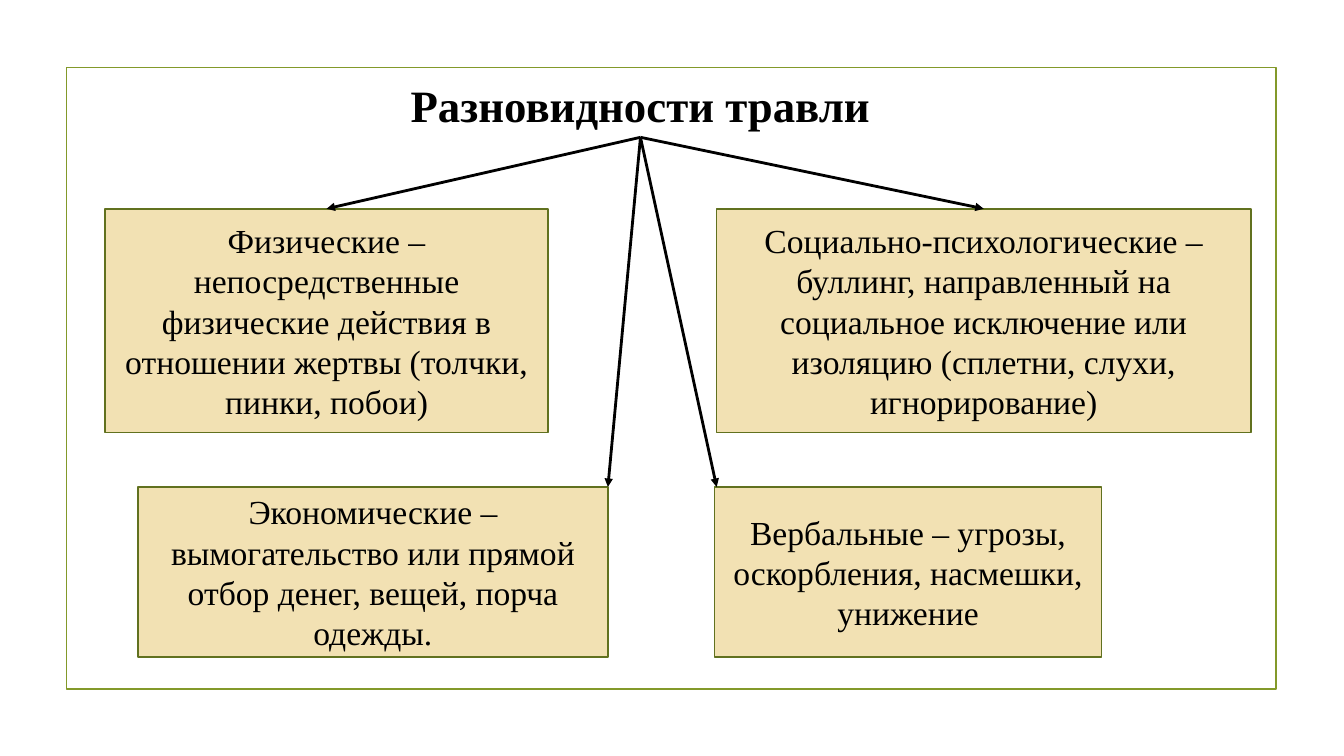
"""Build the slide that shows four kinds of bullying as a branching diagram."""
from dataclasses import dataclass
from typing import Optional

import pptx
import pptx.dml.color
import pptx.enum.shapes
import pptx.enum.text
import pptx.oxml
import pptx.oxml.ns
import pptx.util
from pptx.util import Cm

FONT = "Times New Roman"
BLACK = "000000"
UPPER_TOP, UPPER_HEIGHT = 5.26, 5.64
LOWER_TOP, LOWER_HEIGHT = 12.27, 4.29
TOP_SIDE, BOTTOM_SIDE = 0, 2


@dataclass(frozen=True)
class Kind:
    """A described kind of bullying; without arrow_x its arrow ends mid-top."""

    text: str
    left: float
    top: float
    width: float
    height: float
    arrow_x: Optional[float] = None


KINDS = [
    Kind("Физические – непосредственные физические действия в отношении жертвы "
         "(толчки, пинки, побои)", 2.64, UPPER_TOP, 11.18, UPPER_HEIGHT),
    Kind("Социально-психологические – буллинг, направленный на социальное исключение "
         "или изоляцию (сплетни, слухи, игнорирование)",
         18.06, UPPER_TOP, 13.46, UPPER_HEIGHT),
    Kind("Экономические – вымогательство или прямой отбор денег, вещей, порча одежды.",
         3.48, LOWER_TOP, 11.84, LOWER_HEIGHT, 15.32),
    Kind("Вербальные – угрозы, оскорбления, насмешки, унижение",
         18.01, LOWER_TOP, 9.75, LOWER_HEIGHT, 18.06),
]


def colour(value: str) -> pptx.dml.color.RGBColor:
    """Turn a hex string into a colour."""
    return pptx.dml.color.RGBColor.from_string(value)


def write(shape, text: str, size: float, bold: bool = False) -> None:
    """Put one centred paragraph into a shape."""
    shape.text_frame.text = text
    para = shape.text_frame.paragraphs[0]
    para.alignment = pptx.enum.text.PP_ALIGN.CENTER
    para.font.name = FONT
    para.font.size = pptx.util.Pt(size)
    para.font.bold = bold
    para.font.color.rgb = colour(BLACK)


def add_rectangle(page, left: float, top: float, width: float, height: float,
                  line: str, fill: Optional[str] = None):
    """Add an outlined rectangle, filled when a fill is given."""
    box = page.shapes.add_shape(pptx.enum.shapes.MSO_SHAPE.RECTANGLE,
                                Cm(left), Cm(top), Cm(width), Cm(height))
    box.shadow.inherit = False
    box.line.color.rgb = colour(line)
    box.line.width = pptx.util.Pt(1.25)
    if fill:
        box.fill.solid()
        box.fill.fore_color.rgb = colour(fill)
    else:
        box.fill.background()
    return box


def add_title(page):
    """Fill and place the title placeholder."""
    title = page.shapes.title
    title.left, title.top, title.width, title.height = (
        Cm(10.03), Cm(1.83), Cm(12.22), Cm(1.63))
    write(title, "Разновидности травли", 32, bold=True)
    frame = title.text_frame
    frame.word_wrap = False
    frame.vertical_anchor = pptx.enum.text.MSO_ANCHOR.TOP
    frame.auto_size = pptx.enum.text.MSO_AUTO_SIZE.SHAPE_TO_FIT_TEXT
    return title


def add_kind(page, kind: Kind):
    """Add the box of one kind."""
    box = add_rectangle(page, kind.left, kind.top, kind.width, kind.height,
                        "61711F", "F2E1B3")
    write(box, kind.text, 24)
    box.text_frame.word_wrap = True
    box.text_frame.vertical_anchor = pptx.enum.text.MSO_ANCHOR.MIDDLE
    return box


def add_arrow(page, title, box, kind: Kind) -> None:
    """Lead an arrow from the title to the box of a kind."""
    end_x = kind.left if kind.arrow_x is None else kind.arrow_x
    arrow = page.shapes.add_connector(
        pptx.enum.shapes.MSO_CONNECTOR.STRAIGHT,
        title.left, title.top, Cm(end_x), Cm(kind.top))
    arrow.begin_connect(title, BOTTOM_SIDE)
    if kind.arrow_x is None:
        arrow.end_connect(box, TOP_SIDE)
    arrow.line.color.rgb = colour(BLACK)
    arrow.line.width = pptx.util.Pt(2)
    namespace = pptx.oxml.ns.nsdecls("a")
    arrow.line._get_or_add_ln().append(
        pptx.oxml.parse_xml(f'<a:tailEnd {namespace} type="triangle"/>'))
    arrow._element.spPr.append(pptx.oxml.parse_xml(f"<a:effectLst {namespace}/>"))


def main() -> None:
    """Build and save the deck."""
    deck = pptx.Presentation()
    deck.slide_width, deck.slide_height = Cm(33.87), Cm(19.05)
    page = deck.slides.add_slide(deck.slide_layouts.get_by_name("Title Only"))
    add_rectangle(page, 1.68, 1.7, 30.48, 15.67, "83992A")
    title = add_title(page)
    boxes = [add_kind(page, kind) for kind in KINDS]
    for box, kind in zip(boxes, KINDS):
        add_arrow(page, title, box, kind)
    deck.save("out.pptx")


if __name__ == "__main__":
    main()
